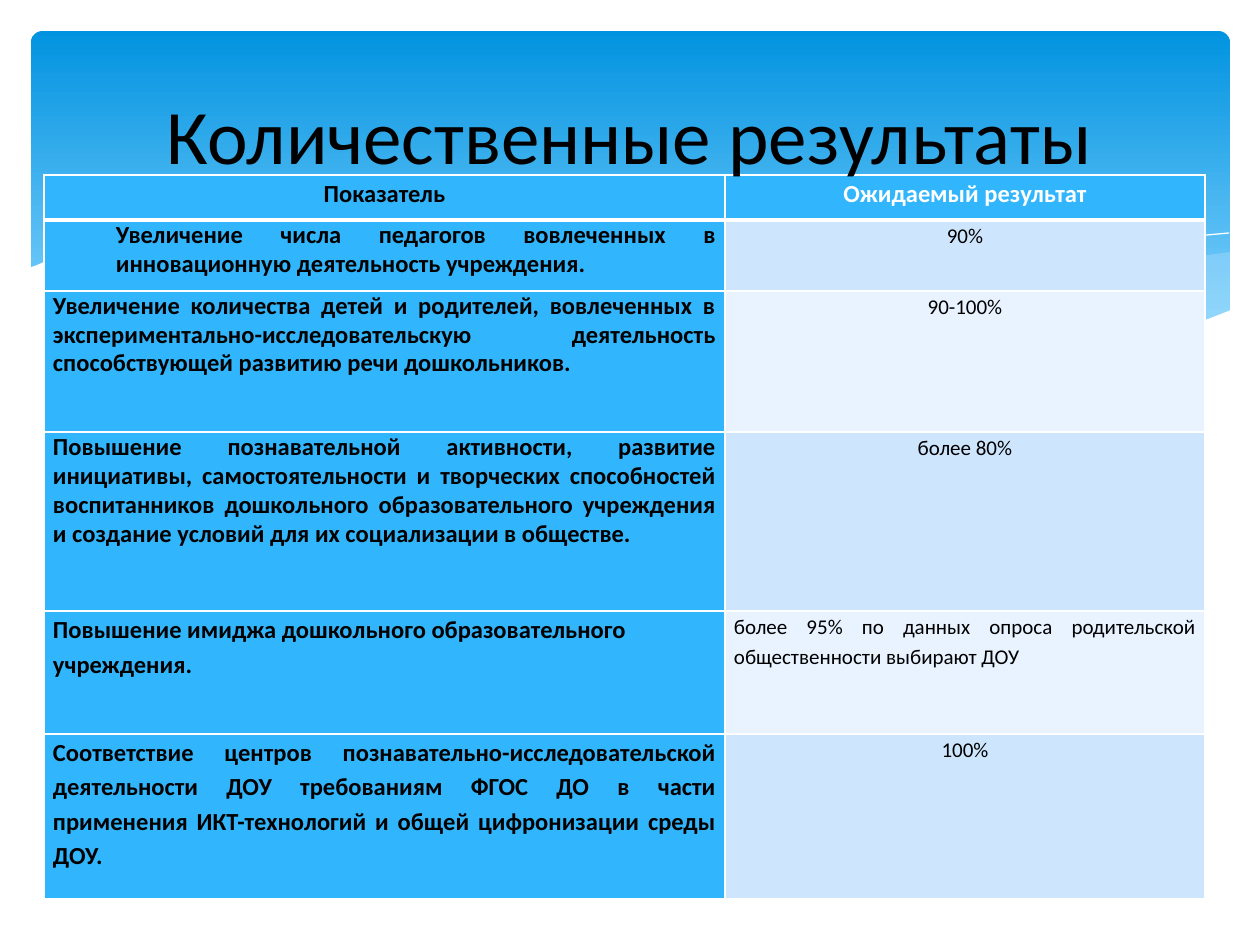
import pptx
import pptx.dml.color
import pptx.enum.shapes
import pptx.enum.text
import pptx.oxml
import pptx.oxml.ns
import pptx.util

PX = 914400 / 126
FONT = "Calibri"
COLORS = {
    "sky_top": "0293E0", "sky_bottom": "83D3FE", "swoosh": "C6E7FC",
    "header": "31B6FD", "band_dark": "CEE5FE", "band_light": "E8F3FF",
    "white": "FFFFFF", "black": "000000",
}
ALIGN = pptx.enum.text.PP_ALIGN
CENTER, JUSTIFY, LEFT = ALIGN.CENTER, ALIGN.JUSTIFY, ALIGN.LEFT

TITLE = "Количественные результаты"
HEADER = ("Показатель", "Ожидаемый результат")
# indicator, its alignment, line spacing, indent in px; result, its alignment
ROWS = [
    ("Увеличение числа педагогов вовлеченных в инновационную деятельность "
     "учреждения.", JUSTIFY, 0.97, 63, "90%", CENTER),
    ("Увеличение количества детей и родителей, вовлеченных в "
     "экспериментально-исследовательскую деятельность способствующей "
     "развитию речи дошкольников.", JUSTIFY, 0.97, 0, "90-100%", CENTER),
    ("Повышение познавательной активности, развитие инициативы, "
     "самостоятельности и творческих способностей воспитанников дошкольного "
     "образовательного учреждения и создание условий для их социализации в "
     "обществе.", JUSTIFY, 0.98, 0, "более 80%", CENTER),
    ("Повышение имиджа дошкольного образовательного учреждения.",
     LEFT, 1.15, 0,
     "более 95% по данных опроса родительской общественности выбирают ДОУ",
     JUSTIFY),
    ("Соответствие центров познавательно-исследовательской деятельности ДОУ "
     "требованиям ФГОС ДО в части применения ИКТ-технологий и общей "
     "цифронизации среды ДОУ.", JUSTIFY, 1.15, 0, "100%", CENTER),
]
COL_WIDTHS = (681, 480)
ROW_HEIGHTS = (45, 71, 141, 179, 123, 165)

RIGHT_SWOOSH = [
    (1230, 252), (1194, 257), (1142, 268), (1085, 281), (1014, 299),
    (919, 319), (833, 334), (888, 341), (954, 348), (1026, 350),
    (1087, 347), (1140, 339), (1187, 326), (1230, 311)]
LEFT_SWOOSH = [
    (1125, 344), (1055, 334), (934, 311), (793, 280), (717, 262), (648, 249),
    (557, 238), (479, 233), (413, 236), (360, 241), (431, 251), (509, 266),
    (566, 280), (668, 302), (757, 321), (857, 338), (942, 348), (1017, 350),
    (1080, 349)]
FALLING_LINE = [
    (389, 246), (433, 239), (505, 236), (591, 238), (672, 244), (766, 257),
    (876, 276), (1002, 304), (1143, 343)]
RISING_LINE = [
    (772, 324), (876, 296), (978, 272), (1091, 251), (1164, 239), (1229, 233)]
WHITE_WAVE = [
    (1231, 310), (1208, 319), (1172, 330), (1133, 339), (1087, 345),
    (1037, 349), (980, 348), (915, 343), (842, 334), (760, 320), (667, 301),
    (563, 277), (460, 255), (368, 239), (290, 233), (223, 232), (166, 234),
    (120, 241), (84, 248), (58, 256), (37, 265), (29, 268), (29, 415),
    (1231, 415)]
# points, fill colour (None for an open line), opacity in percent
WAVES = [
    (RIGHT_SWOOSH, "swoosh", 29), (LEFT_SWOOSH, "swoosh", 40),
    (FALLING_LINE, None, 100), (RISING_LINE, None, 100),
    (WHITE_WAVE, "white", 100),
]


def px(n):
    return pptx.util.Emu(round(n * PX))


def rgb(name):
    return pptx.dml.color.RGBColor.from_string(COLORS[name])


def add_sky(slide):
    sp = slide.shapes.add_shape(
        pptx.enum.shapes.MSO_SHAPE.ROUNDED_RECTANGLE,
        px(31), px(31), px(1199), px(340))
    sp.adjustments[0] = 0.034
    sp.shadow.inherit = False
    sp.line.fill.background()
    sp.fill.gradient()
    sp.fill.gradient_angle = 270
    stops = ((0, "sky_top"), (0.9, "sky_bottom"))
    for stop, (position, color) in zip(sp.fill.gradient_stops, stops):
        stop.position = position
        stop.color.rgb = rgb(color)


def add_wave(slide, points, color, opacity):
    builder = slide.shapes.build_freeform(*points[0], scale=PX)
    builder.add_line_segments(points[1:], close=color is not None)
    sp = builder.convert_to_shape()
    sp.shadow.inherit = False
    if color is None:
        sp.fill.background()
        sp.line.color.rgb = rgb("white")
        sp.line.width = 0
        return
    sp.line.fill.background()
    sp.fill.solid()
    sp.fill.fore_color.rgb = rgb(color)
    if opacity < 100:
        clr = sp._element.spPr.find(".//" + pptx.oxml.ns.qn("a:srgbClr"))
        clr.append(pptx.oxml.parse_xml(
            f'<a:alpha {pptx.oxml.ns.nsdecls("a")} val="{opacity * 1000}"/>'))


def set_borders(cell, bottom=1, top=1):
    tcPr = cell._tc.get_or_add_tcPr()
    for side, width in (("L", 1), ("R", 1), ("T", top), ("B", bottom)):
        tcPr.append(pptx.oxml.parse_xml(
            f'<a:ln{side} {pptx.oxml.ns.nsdecls("a")} w="{width * 12700}">'
            f'<a:solidFill><a:srgbClr val="{COLORS["white"]}"/></a:solidFill>'
            f'</a:ln{side}>'))


def fill_cell(cell, text, fill, size, bold, align=CENTER, spacing=1.15,
              indent=0, color="black"):
    cell.margin_left = cell.margin_right = px(9)
    cell.margin_top = cell.margin_bottom = 0
    cell.fill.solid()
    cell.fill.fore_color.rgb = rgb(fill)
    p = cell.text_frame.paragraphs[0]
    p.text = text
    p.alignment = align
    p.line_spacing = spacing
    if indent:
        p._p.get_or_add_pPr().set("marL", str(px(indent)))
    style(p, size, bold, color)


def style(p, size, bold, color):
    p.font.name = FONT
    p.font.size = pptx.util.Pt(size)
    p.font.bold = bold
    p.font.color.rgb = rgb(color)


def add_results(slide):
    table = slide.shapes.add_table(
        len(ROW_HEIGHTS), len(COL_WIDTHS), px(44), px(175),
        px(sum(COL_WIDTHS)), px(sum(ROW_HEIGHTS))).table
    for column, width in zip(table.columns, COL_WIDTHS):
        column.width = px(width)
    for i, (row, height) in enumerate(zip(table.rows, ROW_HEIGHTS)):
        row.height = px(height)
        for cell in row.cells:
            set_borders(cell, bottom=3 if i == 0 else 1, top=3 if i == 1 else 1)
    for col, color in enumerate(("black", "white")):
        fill_cell(table.cell(0, col), HEADER[col], "header", 14, True,
                  color=color)
    for i, (text, align, spacing, indent, result, result_align) in enumerate(
            ROWS, start=1):
        fill_cell(table.cell(i, 0), text, "header", 14, True, align, spacing,
                  indent)
        fill_cell(table.cell(i, 1), result,
                  "band_dark" if i % 2 else "band_light", 12, False,
                  result_align)


def add_title(slide):
    tf = slide.shapes.add_textbox(px(63), px(47), px(1134), px(173)).text_frame
    tf.word_wrap = True
    tf.vertical_anchor = pptx.enum.text.MSO_ANCHOR.MIDDLE
    p = tf.paragraphs[0]
    p.text = TITLE
    p.alignment = CENTER
    style(p, 44, False, "black")


def main():
    prs = pptx.Presentation()
    prs.slide_width, prs.slide_height = px(1260), px(945)
    slide = prs.slides.add_slide(prs.slide_layouts[6])
    add_sky(slide)
    for wave in WAVES:
        add_wave(slide, *wave)
    add_results(slide)
    add_title(slide)
    prs.save("out.pptx")


if __name__ == "__main__":
    main()
